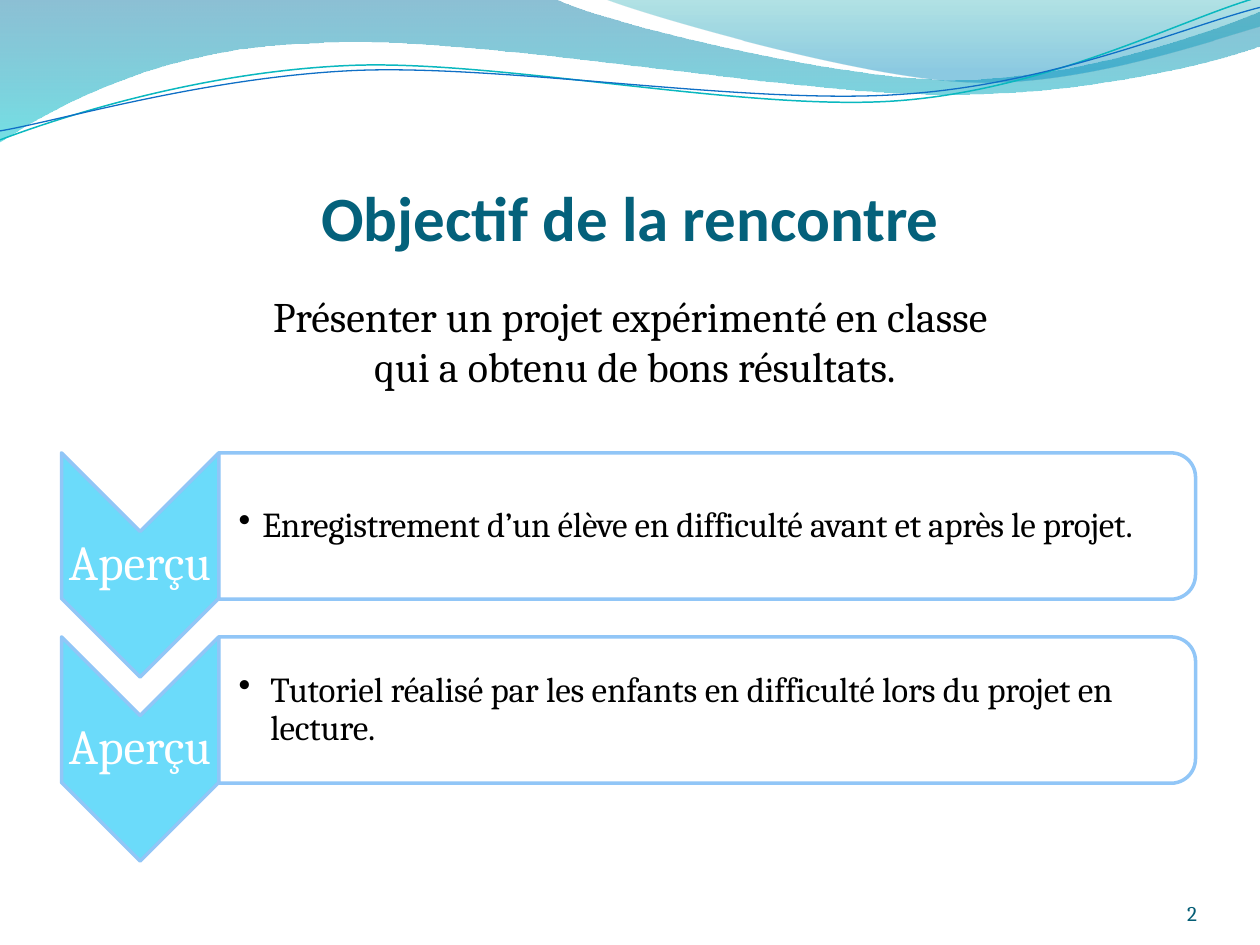
from math import cos, radians, sin

from lxml import etree
from pptx import Presentation
from pptx.dml.color import RGBColor
from pptx.enum.shapes import MSO_SHAPE
from pptx.enum.text import MSO_ANCHOR, MSO_AUTO_SIZE, PP_ALIGN
from pptx.oxml.ns import qn
from pptx.util import Cm, Pt

CHEVRON = MSO_SHAPE.CHEVRON
ROUNDED_BAR = MSO_SHAPE.ROUND_2_SAME_RECTANGLE
TOP, MIDDLE, BOTTOM = MSO_ANCHOR.TOP, MSO_ANCHOR.MIDDLE, MSO_ANCHOR.BOTTOM
LEFT, CENTER, RIGHT = PP_ALIGN.LEFT, PP_ALIGN.CENTER, PP_ALIGN.RIGHT
FIXED, GROW = MSO_AUTO_SIZE.NONE, MSO_AUTO_SIZE.SHAPE_TO_FIT_TEXT

COLORS = {
    "title": "04617B", "text": "000000", "white": "FFFFFF", "number": "045D75",
    "chevron": "6BDBFA", "border": "91C6F7",
    "deep": "0074A1", "aqua": "00C6CF", "teal": "00A1A9", "blue": "008BBF",
    "green line": "0AB8BF", "blue line": "0F6FC6",
}

TITLE = "Objectif de la rencontre"
INTRO = ["Présenter un projet expérimenté en classe",
         " qui a obtenu de bons résultats."]
PAGE_NUMBER = "2"
# label, description, bullet indent in cm, letter spacing in points
STEPS = [
    ("Aperçu", "Enregistrement d’un élève en difficulté avant et après le projet.",
     0.48, -0.2),
    ("Aperçu", "Tutoriel réalisé par les enfants en difficulté lors du projet en lecture.",
     0.64, -0.1),
]

# Outlines in cm: a start point, then line ends (1 point) or Bézier curves (3 points).
# Gradient stops: color, position, opacity in percent.
BANDS = [
    ([[(0, 0)], [(11.18, -0.03)],
      [(12.09, 0.43), (16.87, 1.6), (19.25, 1.6)],
      [(21.67, 1.6), (24.33, 0.66), (25.4, 0.23)], [(25.43, 0.91)],
      [(24.97, 1.12), (22.1, 1.93), (18.95, 1.9)],
      [(15.8, 1.9), (9.7, 0.71), (6.53, 0.86)],
      [(3.28, 0.91), (1.17, 2.11), (-0.03, 2.87)], [(0, 0)]],
     [("deep", 0, 45), ("aqua", 100, 55)]),
    ([[(12.17, -0.03)], [(12.93, 0.28), (17.32, 1.57), (19.53, 1.65)],
      [(21.74, 1.75), (24.41, 0.81), (25.4, 0.53)], [(25.4, 0)], [(12.17, -0.03)]],
     [("teal", 0, 30), ("blue", 80, 45)]),
]
# outline, center of rotation, color, width in points
WAVE_LINES = [
    ([[(0, 2.82)], [(1.22, 2.36), (4.01, 1.45), (7.04, 1.32)],
      [(10.03, 1.19), (15.06, 2.26), (18.11, 2.03)],
      [(21.16, 1.8), (23.83, 0.38), (25.35, -0.05)]],
     (12.67, 1.46), "green line", 0.85),
    ([[(0, 2.64)], [(1.19, 2.44), (4.17, 1.55), (7.19, 1.42)],
      [(10.24, 1.3), (15.16, 2.13), (18.21, 1.9)],
      [(21.23, 1.7), (23.9, 0.53), (25.4, 0.15)]],
     (12.69, 1.5), "blue line", 0.75),
]
WAVE_TILT = 2.7

STEP_TOP, STEP_PITCH = 9.13, 3.71
CHEVRON_LEFT, CHEVRON_WIDTH, CHEVRON_HEIGHT = 1.24, 3.17, 4.52
BAR_LEFT, BAR_WIDTH, BAR_HEIGHT = 4.41, 19.69, 2.95
LABEL_HEIGHT = 1.35


def rgb(name):
    return RGBColor.from_string(COLORS[name])


def set_opacity(color_element, percent):
    etree.SubElement(color_element, qn("a:alpha")).set("val", str(percent * 1000))


def set_line(shape, color, width):
    shape.line.color.rgb = rgb(color)
    shape.line.width = Pt(width)


def write_text(shape, lines, size, color, font="Cambria", bold=False, align=LEFT,
               anchor=TOP, insets=(0.25, 0.13, 0.25, 0.13), fit=FIXED,
               line_spacing=None, space_after=None, bullet_indent=None,
               letter_spacing=None):
    frame = shape.text_frame
    frame.word_wrap = True
    frame.auto_size = fit
    frame.vertical_anchor = anchor
    (frame.margin_left, frame.margin_top,
     frame.margin_right, frame.margin_bottom) = map(Cm, insets)
    for index, line in enumerate(lines):
        paragraph = frame.add_paragraph() if index else frame.paragraphs[0]
        paragraph.alignment = align
        properties = paragraph._p.get_or_add_pPr()
        if line_spacing:
            paragraph.line_spacing = line_spacing
        if space_after:
            spacing = etree.SubElement(properties, qn("a:spcAft"))
            etree.SubElement(spacing, qn("a:spcPct")).set("val", str(space_after * 1000))
        if bullet_indent:
            paragraph.level = 1
            properties.set("marL", str(Cm(bullet_indent)))
            properties.set("indent", str(-Cm(bullet_indent)))
            etree.SubElement(properties, qn("a:buChar")).set("char", "••")
        run = paragraph.add_run()
        run.text = line
        run.font.name, run.font.size, run.font.bold = font, Pt(size), bold
        run.font.color.rgb = rgb(color)
        if letter_spacing:
            run._r.get_or_add_rPr().set("spc", str(round(letter_spacing * 100)))


def add_text(shapes, box, lines, **text_format):
    write_text(shapes.add_textbox(*map(Cm, box)), lines, **text_format)


def add_outline(shapes, outline, close):
    """Draw all points as a polygon, then turn each triple into a Bézier curve."""
    points = [(Cm(x), Cm(y)) for segment in outline for x, y in segment]
    builder = shapes.build_freeform(*points[0])
    builder.add_line_segments(points[1:], close=close)
    shape = builder.convert_to_shape()
    shape.shadow.inherit = False
    line_ends = iter(list(shape._element.iter(qn("a:lnTo"))))
    for segment in outline[1:]:
        ends = [next(line_ends) for _ in segment]
        if len(ends) == 3:
            curve = etree.Element(qn("a:cubicBezTo"))
            ends[0].addprevious(curve)
            for end in ends:
                curve.append(end[0])
                end.getparent().remove(end)
    return shape


def turn(outline, center, degrees):
    """Return the outline turned clockwise around the center."""
    c, s = cos(radians(degrees)), sin(radians(degrees))
    cx, cy = center
    return [[(cx + c * (x - cx) - s * (y - cy), cy + s * (x - cx) + c * (y - cy))
             for x, y in segment] for segment in outline]


def add_waves(shapes):
    for outline, stops in BANDS:
        band = add_outline(shapes, outline, close=True)
        band.line.fill.background()
        band.fill.gradient()
        band.fill.gradient_angle = 270
        for stop, (color, position, opacity) in zip(band.fill.gradient_stops, stops):
            stop.color.rgb = rgb(color)
            stop.position = position / 100
            set_opacity(stop._gs[0], opacity)
    group = shapes.add_group_shape()
    for outline, center, color, width in WAVE_LINES:
        wave = add_outline(group.shapes, turn(outline, center, WAVE_TILT), close=False)
        wave.rotation = 360 - WAVE_TILT
        wave.fill.background()
        set_line(wave, color, width)


def add_turned_shape(shapes, kind, left, top, width, height, fill):
    """Add a shape turned by 90° that covers the given box once turned."""
    shift = (width - height) / 2
    shape = shapes.add_shape(kind, Cm(left + shift), Cm(top - shift),
                             Cm(height), Cm(width))
    shape.rotation = 90
    shape.shadow.inherit = False
    shape.fill.solid()
    shape.fill.fore_color.rgb = rgb(fill)
    set_line(shape, "border", 2)
    return shape


def add_step(shapes, top, label, description, indent, letter_spacing):
    add_turned_shape(shapes, CHEVRON, CHEVRON_LEFT, top, CHEVRON_WIDTH,
                     CHEVRON_HEIGHT, "chevron")
    label_top = top + (CHEVRON_HEIGHT - LABEL_HEIGHT) / 2
    add_text(shapes, (CHEVRON_LEFT, label_top, CHEVRON_WIDTH, LABEL_HEIGHT), [label],
             size=28, color="white", align=CENTER, anchor=MIDDLE,
             insets=(0.05,) * 4, line_spacing=0.9, space_after=35)
    bar = add_turned_shape(shapes, ROUNDED_BAR, BAR_LEFT, top, BAR_WIDTH,
                           BAR_HEIGHT, "white")
    set_opacity(bar._element.spPr.find(qn("a:solidFill"))[0], 90)
    add_text(shapes, (BAR_LEFT, top + 0.15, BAR_WIDTH - 0.13, BAR_HEIGHT - 0.3),
             [description], size=20, color="text", anchor=MIDDLE,
             insets=(0.4, 0.03, 0.03, 0.03), line_spacing=0.9, space_after=15,
             bullet_indent=indent, letter_spacing=letter_spacing)


def main():
    presentation = Presentation()
    presentation.slide_width, presentation.slide_height = Cm(25.4), Cm(19.05)
    slide = presentation.slides.add_slide(presentation.slide_layouts[5])
    shapes = slide.shapes
    title = shapes.title
    add_waves(shapes)

    shapes._spTree.append(title._element)
    title.left, title.top, title.width, title.height = map(Cm, (1.27, 1.96, 22.86, 3.17))
    write_text(title, [TITLE], size=36, color="title", font="Calibri", bold=True,
               align=CENTER, anchor=BOTTOM, insets=(0, 0.13, 0, 0))

    steps = shapes.add_group_shape()
    for index, step in enumerate(STEPS):
        add_step(steps.shapes, STEP_TOP + index * STEP_PITCH, *step)

    add_text(shapes, (1.3, 5.72, 22.81, 2.31), INTRO, size=24, color="text",
             align=CENTER, fit=GROW)
    add_text(shapes, (22.02, 17.65, 2.11, 1.02), [PAGE_NUMBER], size=12, color="number",
             align=RIGHT, anchor=BOTTOM, insets=(0,) * 4)
    presentation.save("out.pptx")


if __name__ == "__main__":
    main()
